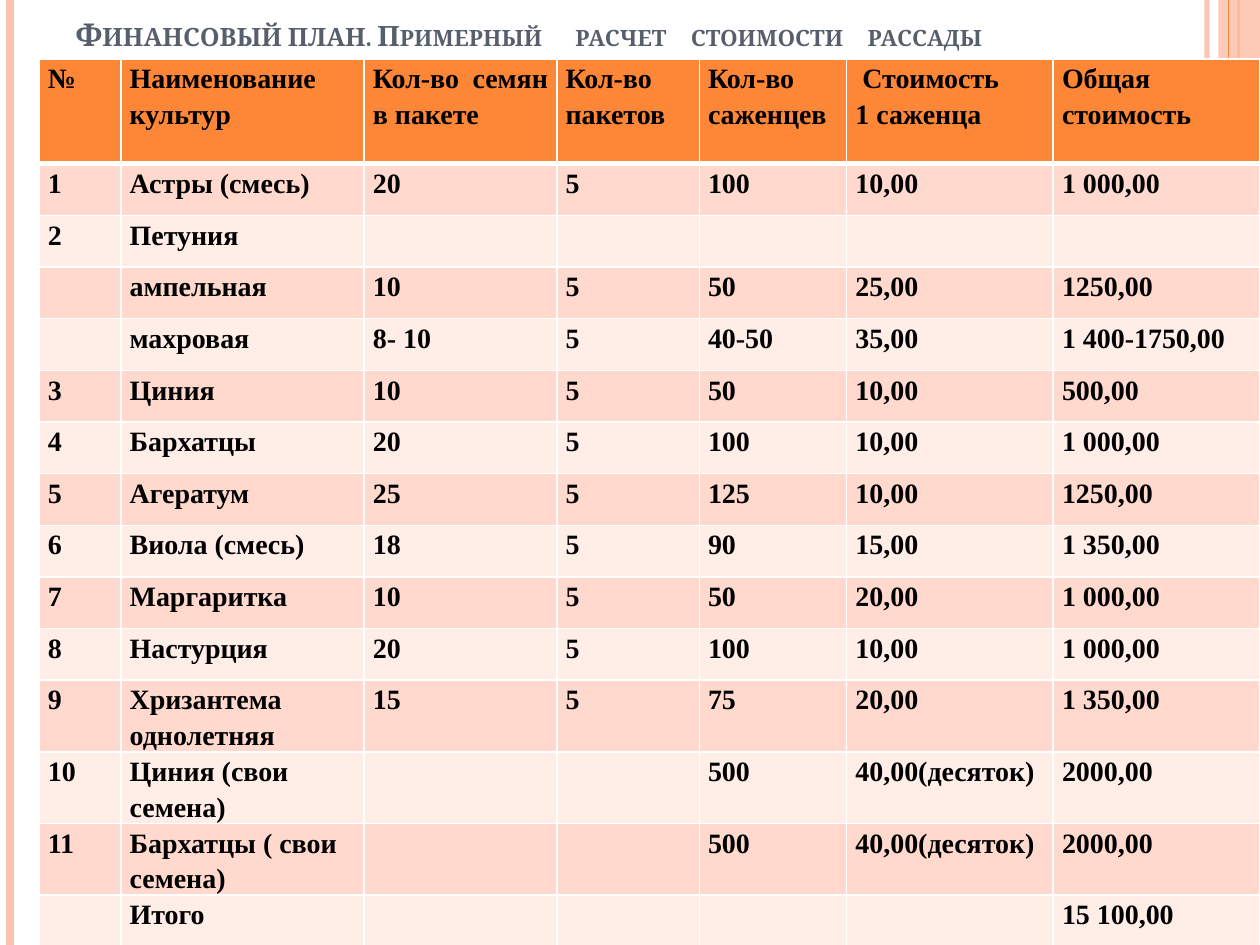
"""Build the slide with the seedling cost table of the financial plan."""
from lxml import etree
from pptx import Presentation
from pptx.dml.color import RGBColor
from pptx.enum.shapes import MSO_CONNECTOR, MSO_SHAPE
from pptx.enum.text import MSO_ANCHOR, PP_ALIGN
from pptx.oxml.ns import qn
from pptx.util import Inches, Pt

STRAIGHT = MSO_CONNECTOR.STRAIGHT
RECTANGLE = MSO_SHAPE.RECTANGLE
BOTTOM = MSO_ANCHOR.BOTTOM
LEFT, JUSTIFY = PP_ALIGN.LEFT, PP_ALIGN.JUSTIFY

WHITE = RGBColor(0xFF, 0xFF, 0xFF)
BLACK = RGBColor(0, 0, 0)
SLATE = RGBColor(0x57, 0x5F, 0x6D)
ORANGE = RGBColor(0xFE, 0x86, 0x37)
PEACH = RGBColor(0xFE, 0xC3, 0xAE)
BAND_DARK = RGBColor(0xFF, 0xD9, 0xCE)
BAND_LIGHT = RGBColor(0xFF, 0xED, 0xE8)

TITLE_FONT, TABLE_FONT = "Cambria", "Times New Roman"
SLIDE_W, SLIDE_H = 10, 7.5
HEADER_H, ROW_H = 0.83, 0.41
COL_WIDTHS = [0.65, 1.93, 1.53, 1.13, 1.17, 1.64, 1.64]

TITLE_RUNS = [
    ("Финансовый план. ", 18, 0),
    ("Примерный", 16, 0), (" ", 16, 8),
    ("расчет", 16, 0), (" ", 16, 5.5),
    ("стоимости", 16, 0), (" ", 16, 5.5),
    ("рассады", 16, 0),
]

ROWS = [
    ["№", "Наименование культур", "Кол-во семян в пакете", "Кол-во пакетов",
     "Кол-во саженцев", " Стоимость \n1 саженца", "Общая \nстоимость"],
    ["1", "Астры (смесь)", "20", "5", "100", "10,00", "1 000,00"],
    ["2", "Петуния", "", "", "", "", ""],
    ["", "ампельная", "10", "5", "50", "25,00", "1250,00"],
    ["", "махровая", "8- 10", "5", "40-50", "35,00", "1 400-1750,00"],
    ["3", "Циния", "10", "5", "50", "10,00", "500,00"],
    ["4", "Бархатцы", "20", "5", "100", "10,00", "1 000,00"],
    ["5", "Агератум", "25", "5", "125", "10,00", "1250,00"],
    ["6", "Виола (смесь)", "18", "5", "90", "15,00", "1 350,00"],
    ["7", "Маргаритка", "10", "5", "50", "20,00", "1 000,00"],
    ["8", "Настурция", "20", "5", "100", "10,00", "1 000,00"],
    ["9", "Хризантема однолетняя", "15", "5", "75", "20,00", "1 350,00"],
    ["10", "Циния (свои семена)", "", "", "500", "40,00(десяток)", "2000,00"],
    ["11", "Бархатцы ( свои семена)", "", "", "500", "40,00(десяток)", "2000,00"],
    ["", "Итого", "", "", "", "", "15 100,00"],
]


def set_alpha(element, percent):
    """Make the solid colour inside the element partly transparent."""
    color = next(element.iter(qn("a:srgbClr")))
    etree.SubElement(color, qn("a:alpha")).set("val", str(percent * 1000))


def add_stripe(s, x, color, width, alpha=100):
    """Draw a vertical line over the full slide height."""
    line = s.shapes.add_connector(
        STRAIGHT, Inches(x), 0, Inches(x), Inches(SLIDE_H))
    line.line.color.rgb = color
    line.line.width = Pt(width)
    sp_pr = line._element.spPr
    if alpha < 100:
        set_alpha(sp_pr, alpha)
    etree.SubElement(sp_pr, qn("a:effectLst"))


def add_band(s, x, width, color, alpha):
    """Draw a translucent vertical band over the full slide height."""
    sp = s.shapes.add_shape(
        RECTANGLE, Inches(x), 0, Inches(width), Inches(SLIDE_H))
    sp.shadow.inherit = False
    sp.fill.solid()
    sp.fill.fore_color.rgb = color
    set_alpha(sp._element.spPr, alpha)
    sp.line.fill.background()


def add_run(p, text, size, font, color):
    """Append a bold run to the paragraph."""
    r = p.add_run()
    r.text = text
    r.font.size = Pt(size)
    r.font.name = font
    r.font.bold = True
    r.font.color.rgb = color
    return r


def fill_title(s):
    """Place the title above the decoration and write it in small caps."""
    title = s.shapes.title
    s.shapes._spTree.append(title._element)
    title.left, title.top = Inches(0.5), 0
    title.width, title.height = Inches(9.11), Inches(0.47)
    tf = title.text_frame
    tf.word_wrap = True
    tf.vertical_anchor = BOTTOM
    p = tf.paragraphs[0]
    p.alignment = LEFT
    for text, size, spacing in TITLE_RUNS:
        r_pr = add_run(p, text, size, TITLE_FONT, SLATE)._r.get_or_add_rPr()
        r_pr.set("cap", "small")
        if spacing:
            r_pr.set("spc", str(int(spacing * 100)))


def add_borders(cell, row):
    """Give the cell white borders, thicker under the header row."""
    widths = {"L": 1, "R": 1, "T": 3 if row == 1 else 1, "B": 3 if row == 0 else 1}
    tc_pr = cell._tc.get_or_add_tcPr()
    for side, width in widths.items():
        ln = etree.SubElement(tc_pr, qn("a:ln" + side), w=str(Pt(width)))
        fill = etree.SubElement(ln, qn("a:solidFill"))
        etree.SubElement(fill, qn("a:srgbClr"), val=str(WHITE))


def fill_cell(cell, text, row, col):
    """Format one table cell and write its text."""
    add_borders(cell, row)
    cell.fill.solid()
    band = BAND_DARK if row % 2 else BAND_LIGHT
    cell.fill.fore_color.rgb = band if row else ORANGE
    cell.margin_left = cell.margin_right = Inches(0.07)
    cell.margin_top = cell.margin_bottom = 0
    if not text:
        return
    tf = cell.text_frame
    left_aligned = col == 1 or (row and col == len(COL_WIDTHS) - 1)
    for i, line in enumerate(text.split("\n")):
        p = tf.add_paragraph() if i else tf.paragraphs[0]
        p.alignment = LEFT if left_aligned else JUSTIFY
        p.line_spacing = 1.15
        add_run(p, line, 16, TABLE_FONT, BLACK)


def add_cost_table(s):
    """Add the table of crops, quantities and costs."""
    height = HEADER_H + ROW_H * (len(ROWS) - 1)
    table = s.shapes.add_table(
        len(ROWS), len(COL_WIDTHS), Inches(0.31), Inches(0.47),
        Inches(sum(COL_WIDTHS)), Inches(height)).table
    for column, width in zip(table.columns, COL_WIDTHS):
        column.width = Inches(width)
    for row, values in enumerate(ROWS):
        table.rows[row].height = Inches(ROW_H if row else HEADER_H)
        for col, text in enumerate(values):
            fill_cell(table.cell(row, col), text, row, col)


def main():
    """Create the presentation and save it."""
    prs = Presentation()
    prs.slide_width, prs.slide_height = Inches(SLIDE_W), Inches(SLIDE_H)
    s = prs.slides.add_slide(prs.slide_layouts[5])
    add_stripe(s, 9.58, PEACH, 3, 93)
    add_stripe(s, 0.08, PEACH, 4.5)
    add_stripe(s, 9.83, ORANGE, 1.5)
    add_band(s, 9.67, 0.33, PEACH, 87)
    add_stripe(s, 9.75, ORANGE, 0.75)
    fill_title(s)
    add_cost_table(s)
    prs.save("out.pptx")


if __name__ == "__main__":
    main()
